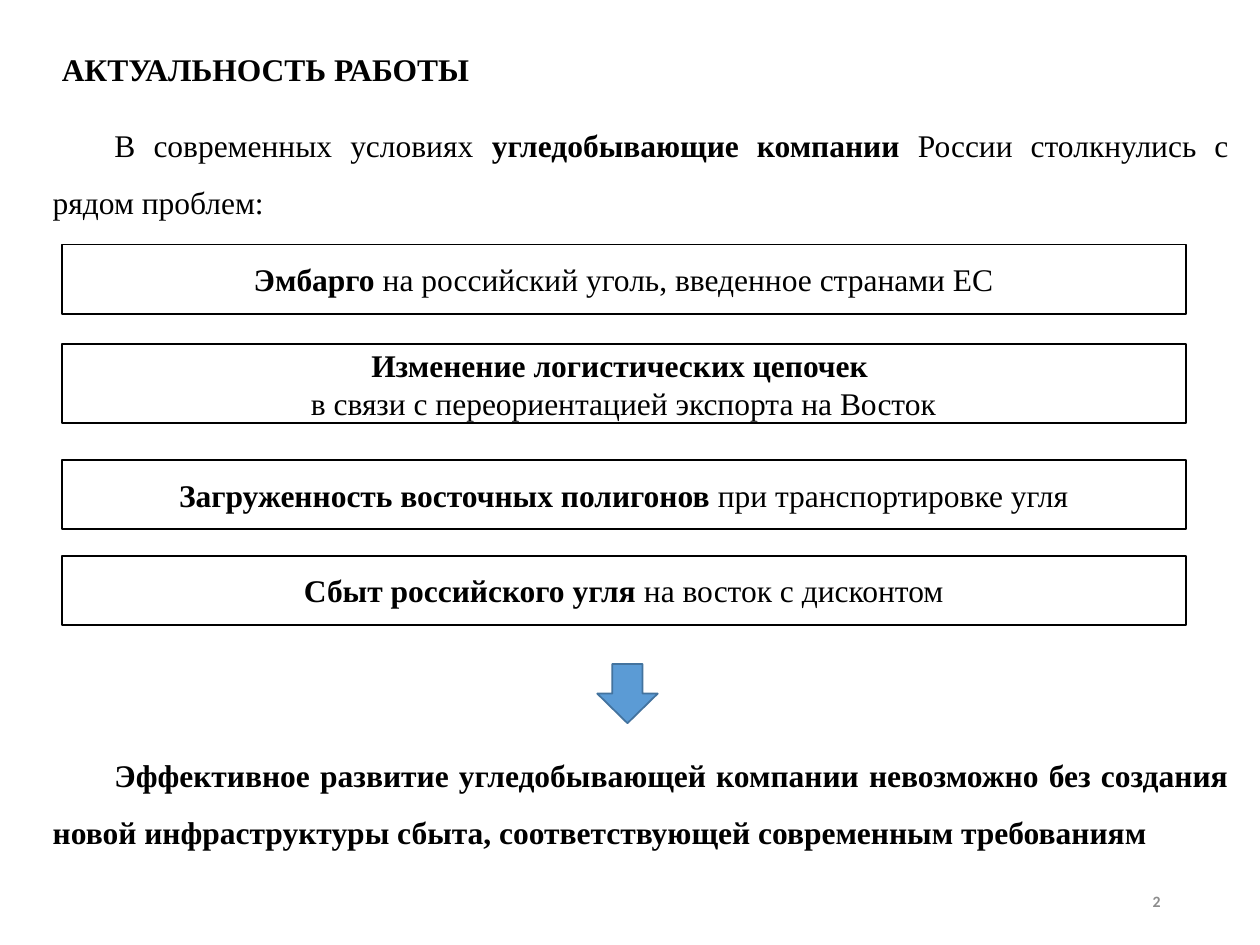
from pptx import Presentation
from pptx.dml.color import RGBColor
from pptx.enum.shapes import MSO_SHAPE as Shape
from pptx.enum.text import MSO_ANCHOR as Anchor, MSO_AUTO_SIZE as AutoSize, PP_ALIGN as Align
from pptx.util import Inches, Pt

BLACK = RGBColor(0, 0, 0)
GREY = RGBColor(0x8C, 0x8C, 0x8C)
BLUE = RGBColor(0x5B, 0x9B, 0xD5)
DARK_BLUE = RGBColor(0x43, 0x73, 0x9E)

COLUMNS, ROWS = 100, 75
MARGIN, CONTENT_WIDTH = 4.9, 89.2
BODY_LEFT, BODY_WIDTH = 3.2, 95.3


class PageBuilder:
    font = "Times New Roman"
    size = 18
    color = BLACK

    def __init__(self, deck):
        self.column = deck.slide_width / COLUMNS
        self.row = deck.slide_height / ROWS
        self.page = deck.slides.add_slide(deck.slide_layouts[6])

    def area(self, left, top, width, height):
        return (round(left * self.column), round(top * self.row),
                round(width * self.column), round(height * self.row))

    def add_spans(self, para, spans, align, font=None, size=None, color=None):
        para.alignment = align
        for text, bold in spans:
            span = para.add_run()
            span.text = text
            span.font.name = font or self.font
            span.font.size = Pt(size or self.size)
            span.font.color.rgb = color or self.color
            span.font.bold = bold

    def text(self, area, spans, align=Align.LEFT, anchor=Anchor.TOP, **style):
        box = self.page.shapes.add_textbox(*self.area(*area))
        frame = box.text_frame
        frame.word_wrap = True
        frame.auto_size = AutoSize.NONE
        frame.vertical_anchor = anchor
        self.add_spans(frame.paragraphs[0], spans, align, **style)
        return frame

    def heading(self, top, text):
        frame = self.text((MARGIN, top, CONTENT_WIDTH, 4), [(text, True)])
        frame.margin_left = frame.margin_right = 0

    def body(self, top, height, spans):
        frame = self.text((BODY_LEFT, top, BODY_WIDTH, height), spans, Align.JUSTIFY)
        para = frame.paragraphs[0]
        para.line_spacing = 1.5
        para._p.get_or_add_pPr().set("indent", str(Inches(0.49)))

    def shape(self, kind, area, line):
        shape = self.page.shapes.add_shape(kind, *self.area(*area))
        shape.shadow.inherit = False
        shape.line.color.rgb = line
        shape.line.width = Pt(1)
        return shape

    def problem(self, top, height, lines):
        box = self.shape(Shape.RECTANGLE, (MARGIN, top, CONTENT_WIDTH, height), BLACK)
        box.fill.background()
        frame = box.text_frame
        frame.word_wrap = True
        frame.vertical_anchor = Anchor.MIDDLE
        for index, spans in enumerate(lines):
            para = frame.add_paragraph() if index else frame.paragraphs[0]
            self.add_spans(para, spans, Align.CENTER)

    def arrow(self, area):
        arrow = self.shape(Shape.DOWN_ARROW, area, DARK_BLUE)
        arrow.fill.solid()
        arrow.fill.fore_color.rgb = BLUE

    def number(self, text):
        self.text((70.6, 69.5, 22.5, 4), [(text, True)], Align.RIGHT, Anchor.MIDDLE,
                  font="Calibri", size=9, color=GREY)


PROBLEMS = [
    (19.4, 5.5, [[("Эмбарго ", True), ("на российский уголь, введенное странами ЕС", False)]]),
    (27.3, 6.3, [[("Изменение логистических цепочек ", True)],
                 [("в связи с переориентацией экспорта на Восток", False)]]),
    (36.5, 5.5, [[("Загруженность восточных полигонов ", True),
                  ("при транспортировке угля", False)]]),
    (44.1, 5.5, [[("Сбыт российского угля ", True), ("на восток с дисконтом", False)]]),
]


def main():
    deck = Presentation()
    deck.slide_width, deck.slide_height = Inches(10), Inches(7.5)
    builder = PageBuilder(deck)
    builder.number("2")
    builder.heading(3.5, "АКТУАЛЬНОСТЬ РАБОТЫ")
    builder.body(8, 9.6, [("В современных условиях ", False),
                          ("угледобывающие компании ", True),
                          ("России столкнулись с рядом проблем:", False)])
    for top, height, lines in PROBLEMS:
        builder.problem(top, height, lines)
    builder.arrow((47.4, 52.7, 4.8, 4.7))
    builder.body(58, 10.1, [("Эффективное развитие угледобывающей компании невозможно без создания "
                             "новой инфраструктуры сбыта, соответствующей современным требованиям",
                             True)])
    deck.save("out.pptx")


if __name__ == "__main__":
    main()
